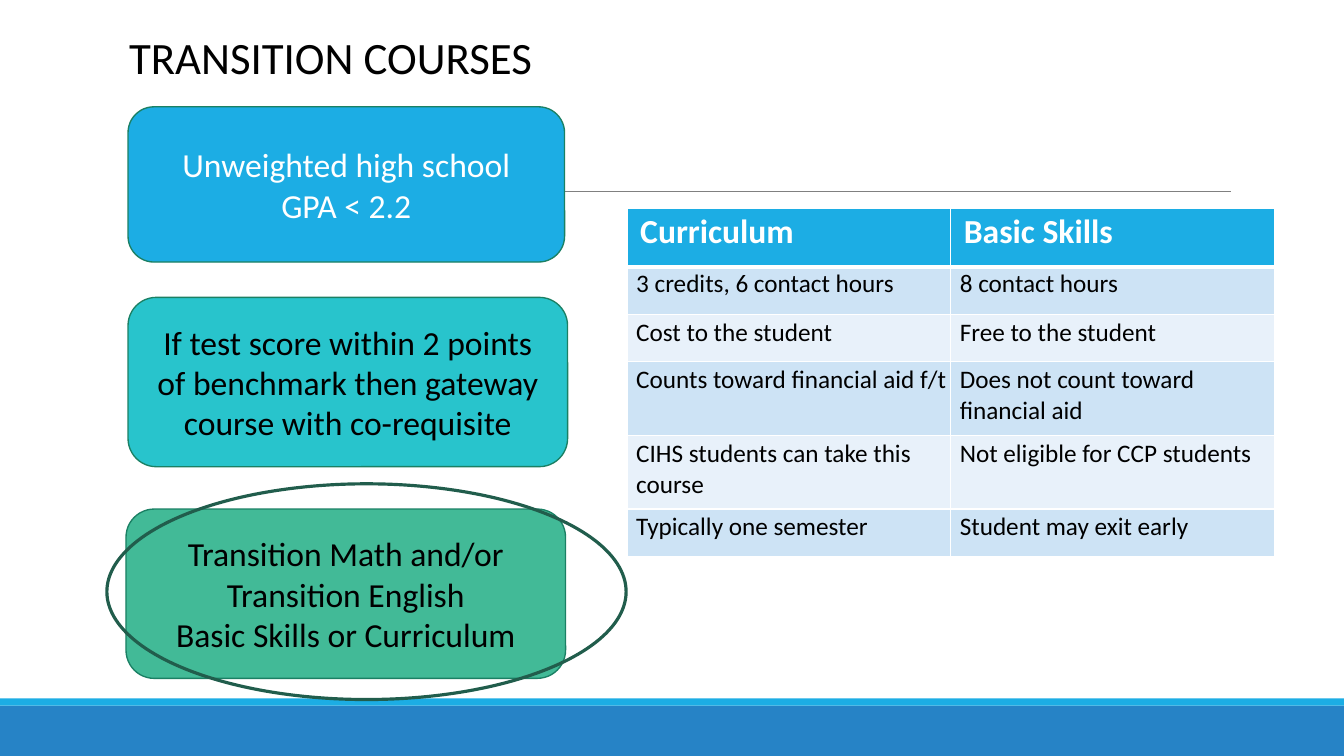
from lxml import etree
from pptx import Presentation
from pptx.dml.color import RGBColor
from pptx.enum.shapes import MSO_CONNECTOR, MSO_SHAPE as SHAPE
from pptx.enum.text import MSO_ANCHOR as ANCHOR, MSO_AUTO_SIZE, PP_ALIGN as ALIGN
from pptx.oxml.ns import qn
from pptx.util import Inches, Pt

BLUE, WHITE, BLACK = "1CADE4", "FFFFFF", "000000"
BANDS = ("CDE3F5", "E8F1FA")
STEPS = [
    (1.27, 1.06, 4.33, 1.54, BLUE, WHITE,
     ["Unweighted high school", "GPA < 2.2"]),
    (1.27, 2.95, 4.36, 1.68, "28C4CC", BLACK,
     ["If test score within 2 points",
      "of benchmark then gateway course with co-requisite"]),
    (1.25, 5.05, 4.36, 1.68, "42BA97", BLACK,
     ["Transition Math and/or", "Transition English", "Basic Skills or Curriculum"]),
]
ROWS = [
    (0.58, "Curriculum", "Basic Skills"),
    (0.47, "3 credits, 6 contact hours", "8 contact hours"),
    (0.47, "Cost to the student", "Free to the student"),
    (0.73, "Counts toward financial aid f/t", "Does not count toward financial aid"),
    (0.73, "CIHS students can take this course", "Not eligible for CCP students"),
    (0.47, "Typically one semester", "Student may exit early"),
]


def rgb(color):
    """Turn a hex string into a colour."""
    return RGBColor.from_string(color)


def write(tf, lines, size=18, color=BLACK, bold=False, align=ALIGN.LEFT, before=0):
    """Fill a text frame with one paragraph per line."""
    for i, line in enumerate(lines):
        p = tf.paragraphs[0] if i == 0 else tf.add_paragraph()
        p.alignment = align
        p.space_before = Pt(before)
        r = p.add_run()
        r.text = line
        r.font.name, r.font.size, r.font.bold = "Calibri", Pt(size), bold
        r.font.color.rgb = rgb(color)


def add_shape(s, kind, x, y, w, h, fill=None, line=None, width=1):
    """Add a preset shape with an optional fill and outline."""
    sp = s.shapes.add_shape(kind, Inches(x), Inches(y), Inches(w), Inches(h))
    sp.shadow.inherit = False
    if fill:
        sp.fill.solid()
        sp.fill.fore_color.rgb = rgb(fill)
    else:
        sp.fill.background()
    if line:
        sp.line.color.rgb = rgb(line)
        sp.line.width = Pt(width)
    else:
        sp.line.fill.background()
    return sp


def add_rule(s, x1, x2, y):
    """Add the thin grey horizontal rule."""
    cxn = s.shapes.add_connector(
        MSO_CONNECTOR.STRAIGHT, Inches(x1), Inches(y), Inches(x2), Inches(y))
    cxn.line.color.rgb = rgb("808080")
    cxn.line.width = Pt(0.5)
    etree.SubElement(cxn.element.spPr, qn("a:effectLst"))


def add_step(s, x, y, w, h, fill, color, lines):
    """Add a rounded box with centred text."""
    sp = add_shape(s, SHAPE.ROUNDED_RECTANGLE, x, y, w, h, fill, "1B8064", 0.96)
    tf = sp.text_frame
    tf.word_wrap = True
    tf.vertical_anchor = ANCHOR.MIDDLE
    tf.margin_left = tf.margin_right = tf.margin_top = tf.margin_bottom = 0
    write(tf, lines, size=24, color=color, align=ALIGN.CENTER)


def set_borders(cell, **widths):
    """Draw white cell borders, with widths in points by side."""
    tc_pr = cell._tc.get_or_add_tcPr()
    for i, (side, width) in enumerate(widths.items()):
        ln = etree.Element(qn(f"a:ln{side}"), w=str(Pt(width)))
        fill = etree.SubElement(ln, qn("a:solidFill"))
        etree.SubElement(fill, qn("a:srgbClr"), val=WHITE)
        tc_pr.insert(i, ln)


def add_comparison(s, x, y, col_width):
    """Add the table that compares the two kinds of course."""
    height = sum(row[0] for row in ROWS)
    table = s.shapes.add_table(len(ROWS), 2, Inches(x), Inches(y),
                               Inches(2 * col_width), Inches(height)).table
    for col in table.columns:
        col.width = Inches(col_width)
    for i, (row_height, *texts) in enumerate(ROWS):
        header = i == 0
        table.rows[i].height = Inches(row_height)
        for j, text in enumerate(texts):
            cell = table.cell(i, j)
            cell.margin_left = Inches(0.13 if header else 0.09)
            cell.margin_right = cell.margin_bottom = 0
            cell.margin_top = Inches(0.01 if i == 1 else 0.03)
            cell.fill.solid()
            cell.fill.fore_color.rgb = rgb(BLUE if header else BANDS[(i - 1) % 2])
            write(cell.text_frame, [text], size=24 if header else 18,
                  color=WHITE if header else BLACK, bold=header,
                  before=1 if i == 1 else 2)
            set_borders(cell, L=1, R=1, T=3 if i == 1 else 1, B=3 if header else 1)


def set_title(s, text):
    """Place and format the title placeholder."""
    title = s.shapes.title
    title.left, title.top = Inches(1.18), Inches(0.24)
    title.width, title.height = Inches(6.1), Inches(0.64)
    tf = title.text_frame
    tf.auto_size = MSO_AUTO_SIZE.NONE
    tf.vertical_anchor = ANCHOR.TOP
    write(tf, [text], size=32)


def main():
    """Build the slide and save it."""
    prs = Presentation()
    prs.slide_width, prs.slide_height = Inches(13.33), Inches(7.5)
    s = prs.slides.add_slide(prs.slide_layouts[5])
    set_title(s, "TRANSITION COURSES")
    add_shape(s, SHAPE.RECTANGLE, 0, 7, 13.33, 0.5, "2683C6")
    add_shape(s, SHAPE.RECTANGLE, 0, 6.93, 13.33, 0.07, BLUE)
    add_rule(s, 1.31, 12.21, 1.9)
    for step in STEPS:
        add_step(s, *step)
    add_comparison(s, 6.22, 2.07, 3.21)
    add_shape(s, SHAPE.OVAL, 1.06, 4.8, 5.15, 2.14, line="215D4C", width=2.28)
    prs.save("out.pptx")


if __name__ == "__main__":
    main()
